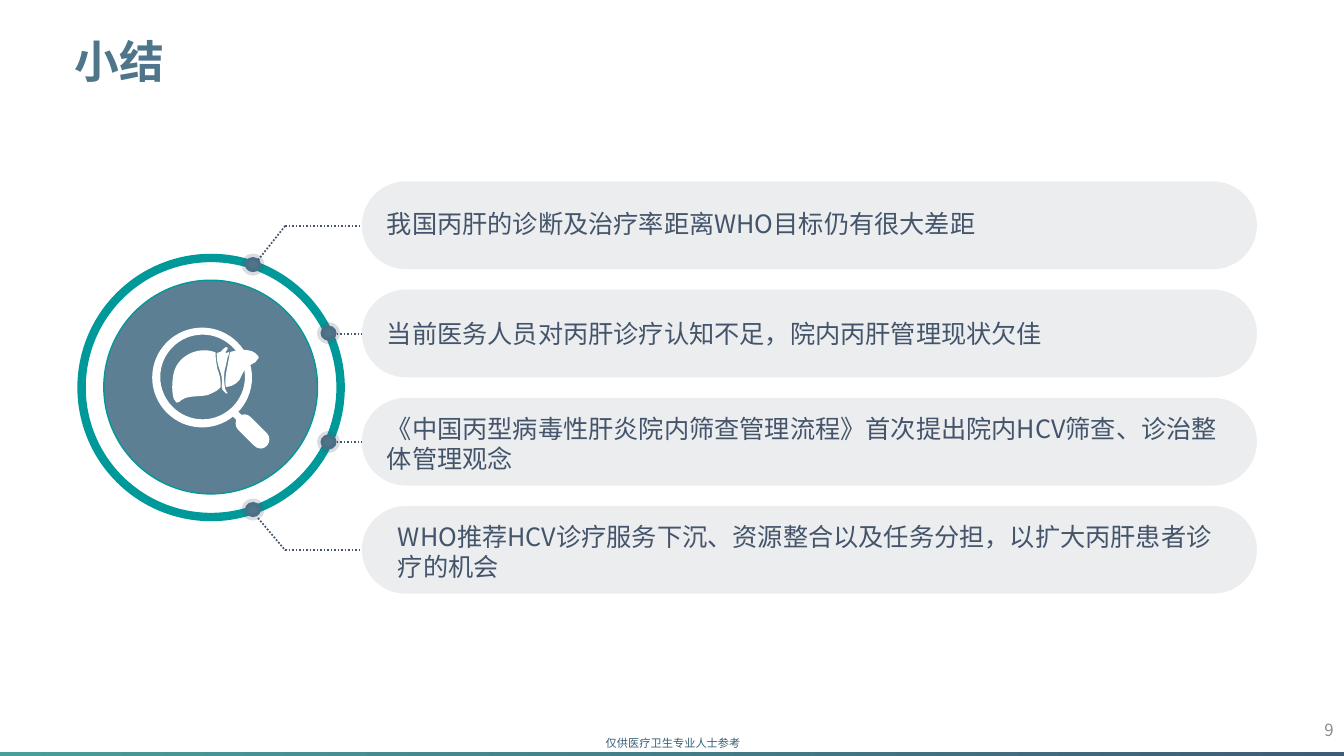
"""Build the hepatitis C summary slide with four linked takeaways."""
from math import cos, pi, sin

from lxml import etree
from pptx import Presentation
from pptx.dml.color import RGBColor
from pptx.enum.dml import MSO_LINE
from pptx.enum.shapes import MSO_CONNECTOR, MSO_SHAPE
from pptx.enum.text import MSO_ANCHOR, PP_ALIGN
from pptx.oxml.ns import qn
from pptx.util import Inches, Pt

ARC, OVAL = MSO_SHAPE.ARC, MSO_SHAPE.OVAL
BAR, PILL = MSO_SHAPE.RECTANGLE, MSO_SHAPE.ROUNDED_RECTANGLE
STRAIGHT, DOTTED = MSO_CONNECTOR.STRAIGHT, MSO_LINE.ROUND_DOT
TOP, MIDDLE = MSO_ANCHOR.TOP, MSO_ANCHOR.MIDDLE
LEFT, RIGHT = PP_ALIGN.LEFT, PP_ALIGN.RIGHT

TEAL = RGBColor(0x00, 0x99, 0x99)
STEEL = RGBColor(0x4F, 0x75, 0x8B)
SLATE = RGBColor(0x44, 0x54, 0x6A)
FOOTER = RGBColor(0x35, 0x60, 0x77)
GRAY = RGBColor(0x8C, 0x8C, 0x8C)
WHITE = RGBColor(0xFF, 0xFF, 0xFF)
BAR_START = RGBColor(0x48, 0x9E, 0x98)
BAR_END = RGBColor(0x3E, 0x5C, 0x76)

SLIDE_WIDTH = 40 / 3
PILL_LEFT, PILL_TOP, LEADER_TOP = 3.59, 1.8, 2.24
PITCH = 3.22 / 3
TAKEAWAYS = [
    ("我国丙肝的诊断及治疗率距离WHO目标仍有很大差距", (3.74, 2.02, 8.47, 0.48)),
    ("当前医务人员对丙肝诊疗认知不足，院内丙肝管理现状欠佳", (3.74, 3.11, 8.47, 0.4)),
    ("《中国丙型病毒性肝炎院内筛查管理流程》首次提出院内HCV筛查、诊治整体管理观念",
     (3.74, 4.05, 8.54, 0.71)),
    ("WHO推荐HCV诊疗服务下沉、资源整合以及任务分担，以扩大丙肝患者诊疗的机会",
     (3.85, 5.12, 8.36, 0.71)),
]
DOTS = [(2.43, 2.55), (3.18, 3.23), (3.18, 4.31), (2.43, 4.98)]
LEADER_STARTS = [2.83, 3.34, 3.34, 2.83]
ELBOWS = [((2.56, 2.58), 0), ((2.56, 5.14), 3)]

NECK = [(2.48, 4.31), (2.29, 4.11), (2.34, 4.06), (2.53, 4.25)]
GRIP = [
    (2.59, 4.45), (2.56, 4.45), (2.54, 4.44), (2.52, 4.42), (2.36, 4.26), (2.36, 4.26),
    (2.36, 4.26), (2.33, 4.23), (2.33, 4.17), (2.36, 4.14), (2.4, 4.1), (2.45, 4.1),
    (2.49, 4.14), (2.65, 4.3), (2.65, 4.3), (2.65, 4.3), (2.68, 4.33), (2.68, 4.39),
    (2.65, 4.42), (2.63, 4.44), (2.61, 4.45), (2.59, 4.45)]
RIGHT_LOBE = [
    (2.24, 3.73), (2.24, 3.76), (2.23, 3.79), (2.24, 3.83), (2.24, 3.84), (2.24, 3.84),
    (2.25, 3.84), (2.32, 3.83), (2.38, 3.79), (2.4, 3.72), (2.45, 3.6), (2.54, 3.62),
    (2.56, 3.56), (2.57, 3.55), (2.57, 3.54), (2.56, 3.53), (2.5, 3.45), (2.38, 3.47),
    (2.29, 3.49), (2.28, 3.49), (2.28, 3.5), (2.28, 3.5), (2.27, 3.58), (2.25, 3.65),
    (2.24, 3.73)]
LEFT_LOBE = [
    (2.16, 3.67), (2.15, 3.62), (2.14, 3.57), (2.14, 3.53), (2.14, 3.52), (2.14, 3.51),
    (2.14, 3.5), (2.14, 3.49), (2.13, 3.5), (2.12, 3.49), (1.97, 3.44), (1.78, 3.52),
    (1.73, 3.68), (1.71, 3.74), (1.7, 3.87), (1.72, 3.94), (1.72, 3.95), (1.73, 3.97),
    (1.74, 3.98), (1.75, 4), (1.76, 4), (1.77, 3.99), (1.78, 3.99), (1.79, 3.98),
    (1.8, 3.97), (1.87, 3.92), (1.97, 3.94), (2.06, 3.92), (2.1, 3.9), (2.14, 3.89),
    (2.17, 3.86), (2.19, 3.84), (2.19, 3.85), (2.19, 3.82), (2.19, 3.77), (2.18, 3.71),
    (2.16, 3.67)]
LIGAMENT = [
    (2.18, 3.67), (2.2, 3.72), (2.21, 3.78), (2.2, 3.83), (2.2, 3.85), (2.2, 3.86),
    (2.21, 3.87), (2.22, 3.88), (2.25, 3.92), (2.26, 3.9), (2.26, 3.89), (2.26, 3.89),
    (2.25, 3.89), (2.24, 3.87), (2.23, 3.86), (2.23, 3.83), (2.22, 3.76), (2.22, 3.69),
    (2.24, 3.63), (2.25, 3.6), (2.25, 3.57), (2.26, 3.54), (2.27, 3.53), (2.27, 3.53),
    (2.27, 3.52), (2.27, 3.49), (2.28, 3.49), (2.25, 3.5), (2.24, 3.5), (2.24, 3.5),
    (2.24, 3.5), (2.24, 3.5), (2.24, 3.49), (2.24, 3.49), (2.25, 3.48), (2.25, 3.47),
    (2.26, 3.46), (2.26, 3.46), (2.26, 3.46), (2.26, 3.45), (2.25, 3.44), (2.23, 3.44),
    (2.22, 3.46), (2.21, 3.47), (2.2, 3.48), (2.19, 3.49), (2.18, 3.5), (2.17, 3.5),
    (2.16, 3.5), (2.15, 3.5), (2.15, 3.5), (2.15, 3.51), (2.15, 3.57), (2.16, 3.62),
    (2.18, 3.67)]


def circle(left, top, size):
    radius, pull = size / 2, 0.55
    points = [(left + size, top + radius)]
    for quarter in range(4):
        c, s = cos(quarter * pi / 2), sin(quarter * pi / 2)
        points += [(left + radius * (1 + u * c - v * s), top + radius * (1 + u * s + v * c))
                   for u, v in ((1, pull), (pull, 1), (0, 1))]
    return points


class SlideKit:
    """Hold the text style and the current slide, and draw its elements."""

    def __init__(self, page):
        self.page = page
        self.face = "Noto Sans CJK SC"

    def paint(self, fill, color, alpha=100):
        fill.solid()
        fill.fore_color.rgb = color
        if alpha < 100:
            for tint in fill._xPr.iter(qn("a:srgbClr")):
                etree.SubElement(tint, qn("a:alpha"), val=str(alpha * 1000))

    def shape(self, kind, at, fill=None, alpha=100, line=None, width=1, line_alpha=100,
              adjust=()):
        shape = self.page.shapes.add_shape(kind, *map(Inches, at))
        shape.shadow.inherit = False
        for index, value in enumerate(adjust):
            shape.adjustments[index] = value
        if fill is None:
            shape.fill.background()
        else:
            self.paint(shape.fill, fill, alpha)
        if line is None:
            shape.line.fill.background()
        else:
            shape.line.width = Pt(width)
            self.paint(shape.line.fill, line, line_alpha)
        return shape

    def gradient_bar(self, at, *colors):
        bar = self.shape(BAR, at)
        bar.fill.gradient()
        bar.fill.gradient_angle = 0
        for stop, color in zip(bar.fill.gradient_stops, colors):
            stop.color.rgb = color

    def outline(self, contours, color, curved=True):
        """Draw closed contours; curved ones list cubic control points in threes."""
        contours = [[tuple(map(Inches, point)) for point in points] for points in contours]
        builder = self.page.shapes.build_freeform(*contours[0][0])
        for index, points in enumerate(contours):
            if index:
                builder.move_to(*points[0])
            builder.add_line_segments(points[1:], close=True)
        shape = builder.convert_to_shape()
        shape.shadow.inherit = False
        self.paint(shape.fill, color)
        shape.line.fill.background()
        segments = list(shape._element.iter(qn("a:lnTo"))) if curved else []
        for first in range(0, len(segments), 3):
            bend = etree.Element(qn("a:cubicBezTo"))
            segments[first].addprevious(bend)
            for segment in segments[first:first + 3]:
                bend.append(segment[0])
                segment.getparent().remove(segment)

    def leader(self, start, end):
        line = self.page.shapes.add_connector(STRAIGHT, *map(Inches, (*start, *end)))
        line.line.width = Pt(1.25)
        line.line.color.rgb = SLATE
        line.line.dash_style = DOTTED
        etree.SubElement(line._element.spPr, qn("a:effectLst"))

    def text(self, words, at, size, color, face=None, bold=False, align=LEFT,
             anchor=TOP, wrap=True, spacing=1.0):
        box = self.page.shapes.add_textbox(*map(Inches, at))
        frame = box.text_frame
        para = frame.paragraphs[0]
        span = para.add_run()
        span.text = words
        formats = {
            frame: {"word_wrap": wrap, "vertical_anchor": anchor},
            para: {"alignment": align, "line_spacing": spacing},
            span.font: {"size": Pt(size), "bold": bold, "name": face or self.face},
        }
        for target, values in formats.items():
            for name, value in values.items():
                setattr(target, name, value)
        span.font.color.rgb = color
        etree.SubElement(span.font._element, qn("a:ea"), typeface=self.face)


def main():
    deck = Presentation()
    deck.slide_width, deck.slide_height = Inches(SLIDE_WIDTH), Inches(7.5)
    kit = SlideKit(deck.slides.add_slide(deck.slide_layouts[6]))

    kit.gradient_bar((0, 7.46, SLIDE_WIDTH, 0.04), BAR_START, BAR_END)
    kit.text("仅供医疗卫生专业人士参考", (5.91, 7.26, 1.55, 0.24), 8, FOOTER, face="Arial",
             wrap=False)
    kit.text("9", (10.33, 7.04, 3, 0.4), 12, GRAY, align=RIGHT, anchor=MIDDLE)

    kit.shape(ARC, (0.81, 2.56, 2.57, 2.57), line=TEAL, width=6, adjust=(146.7, 146.69))
    kit.shape(OVAL, (1.03, 2.78, 2.12, 2.12), STEEL, 92, TEAL)
    for dot in DOTS:
        kit.shape(OVAL, (*dot, 0.16, 0.15), STEEL, line=SLATE, width=5, line_alpha=20)

    levels = [LEADER_TOP + row * PITCH for row in range(len(TAKEAWAYS))]
    for row, (words, at) in enumerate(TAKEAWAYS):
        kit.shape(PILL, (PILL_LEFT, PILL_TOP + row * PITCH, 8.88, 0.87), SLATE, 10,
                  adjust=(0.5,))
        kit.leader((LEADER_STARTS[row], levels[row]), (PILL_LEFT, levels[row]))
        kit.text(words, at, 18, SLATE)
    for start, row in ELBOWS:
        kit.leader(start, (LEADER_STARTS[row], levels[row]))

    kit.outline([circle(1.51, 3.25, 0.99), circle(1.59, 3.32, 0.84)], WHITE)
    kit.outline([NECK], WHITE, curved=False)
    kit.outline([GRIP], WHITE)
    kit.outline([RIGHT_LOBE, LEFT_LOBE, LIGAMENT], WHITE)
    kit.text("小结", (0.64, 0.4, 10.87, 0.47), 32, STEEL, bold=True, anchor=MIDDLE,
             spacing=0.9)
    deck.save("out.pptx")


if __name__ == "__main__":
    main()
